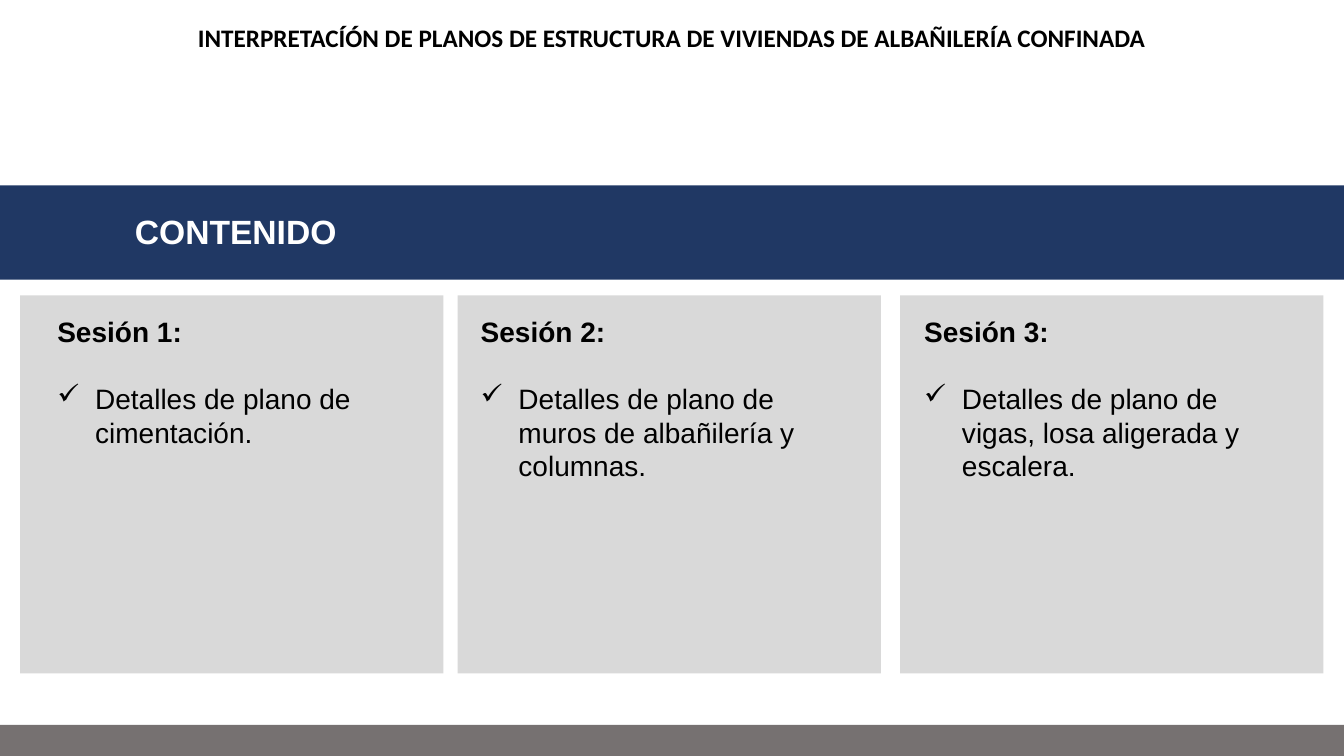
from lxml import etree
from pptx import Presentation
from pptx.dml.color import RGBColor
from pptx.enum.shapes import MSO_SHAPE as Shape
from pptx.enum.text import PP_ALIGN as Align
from pptx.oxml.ns import qn
from pptx.util import Pt

WIDTH, HEIGHT = 960, 540
SESSIONS = [  # card left, text left, heading, topic
    (14.4, 33.84, "Sesión 1:", "Detalles de plano de cimentación."),
    (326.88, 336.24, "Sesión 2:",
     "Detalles de plano de muros de albañilería y columnas."),
    (642.96, 653.04, "Sesión 3:",
     "Detalles de plano de vigas, losa aligerada y escalera."),
]


def color(hex_code):
    return RGBColor.from_string(hex_code)


def add_rect(slide, x, y, w, h, fill):
    s = slide.shapes.add_shape(Shape.RECTANGLE, Pt(x), Pt(y), Pt(w), Pt(h))
    s.shadow.inherit = False
    s.fill.solid()
    s.fill.fore_color.rgb = color(fill)
    s.line.fill.background()


def add_text_frame(slide, x, y, w, h):
    tf = slide.shapes.add_textbox(Pt(x), Pt(y), Pt(w), Pt(h)).text_frame
    tf.word_wrap = True
    return tf


def add_run(p, text, size, font="Arial", fill="000000", bold=True):
    r = p.add_run()
    r.text = text
    r.font.size = Pt(size)
    r.font.name = font
    r.font.bold = bold
    r.font.color.rgb = color(fill)


def add_check_bullet(p, indent):
    pPr = p._p.get_or_add_pPr()
    pPr.set("marL", str(Pt(indent)))
    pPr.set("indent", str(-Pt(indent)))
    etree.SubElement(pPr, qn("a:buChar")).set("char", "✓")


def add_title(slide, x, y, w, h):
    p = add_text_frame(slide, x, y, w, h).paragraphs[0]
    p.alignment = Align.CENTER
    add_run(p, "INTERPRETACÍÓN DE PLANOS DE ESTRUCTURA DE VIVIENDAS "
               "DE ALBAÑILERÍA CONFINADA", 18, "Calibri")


def add_banner(slide, x, y, w, h):
    add_rect(slide, x, y, w, h, "203864")
    tf = add_text_frame(slide, x + 89.3, y + 14.4, w - 120, 36)
    add_run(tf.paragraphs[0], "CONTENIDO", 24, fill="FFFFFF")


def add_session(slide, x, y, w, h, text_x, heading, topic):
    add_rect(slide, x, y, w, h, "D9D9D9")
    tf = add_text_frame(slide, text_x, y + 10, 262, 128)
    add_run(tf.paragraphs[0], heading, 20)
    p = tf.add_paragraph()
    p.space_before = Pt(24)
    add_check_bullet(p, 27)
    add_run(p, topic, 20, bold=False)


def main():
    prs = Presentation()
    prs.slide_width, prs.slide_height = Pt(WIDTH), Pt(HEIGHT)
    slide = prs.slides.add_slide(prs.slide_layouts[6])
    add_rect(slide, 0, 517.7, WIDTH, 22.3, "767171")
    add_title(slide, 14.4, 12.24, 931, 29)
    add_banner(slide, 0, 132.5, WIDTH, 67.3)
    for x, text_x, heading, topic in SESSIONS:
        add_session(slide, x, 211, 302.4, 270, text_x, heading, topic)
    prs.save("out.pptx")


if __name__ == "__main__":
    main()
